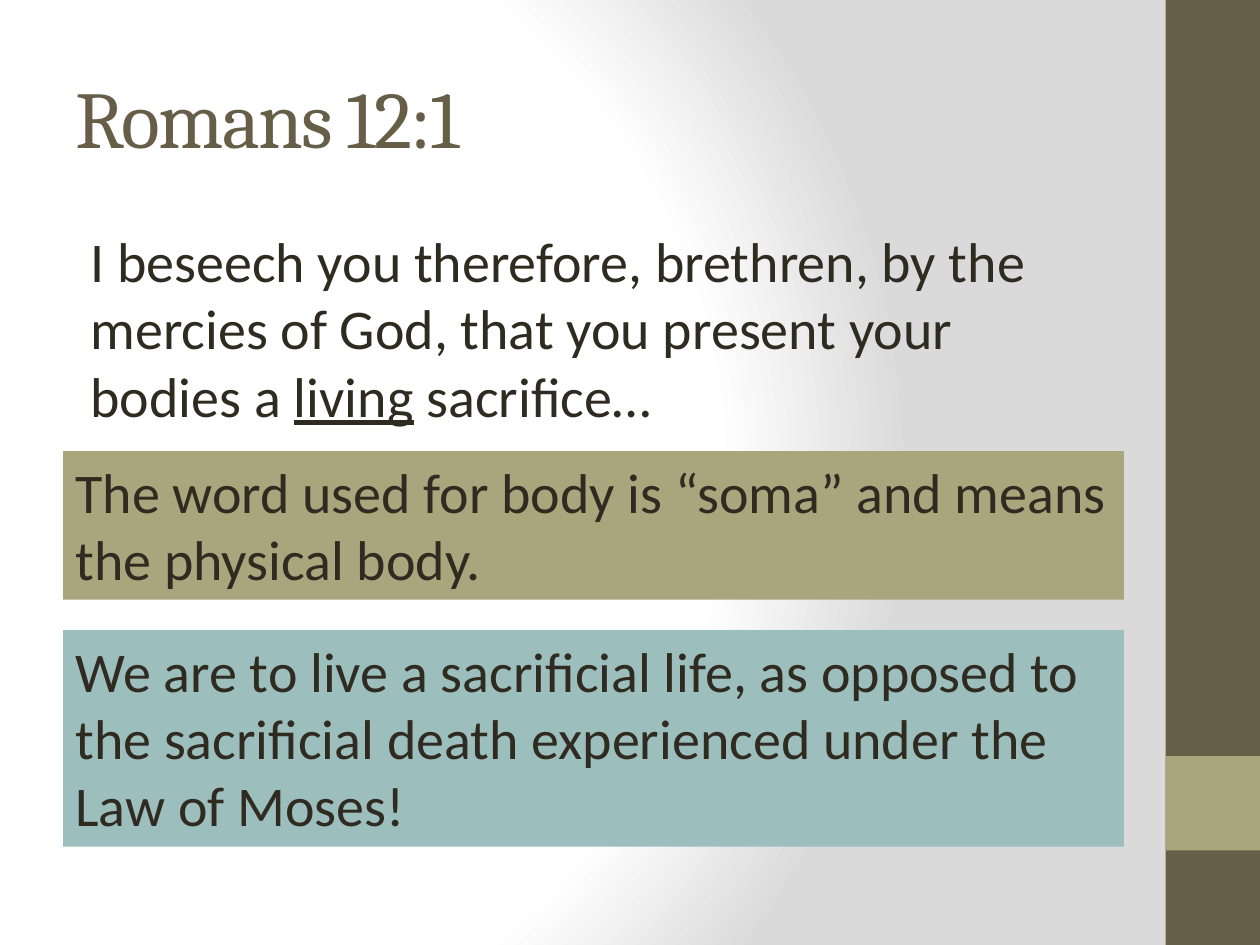
"""Build the Romans 12:1 slide with its verse and two commentary panels."""
from dataclasses import dataclass

from lxml import etree
from pptx import Presentation
from pptx.dml.color import RGBColor
from pptx.enum.shapes import MSO_SHAPE
from pptx.enum.text import MSO_ANCHOR, MSO_AUTO_SIZE, PP_ALIGN
from pptx.oxml.ns import qn
from pptx.slide import Slide
from pptx.util import Pt

RECTANGLE = MSO_SHAPE.RECTANGLE
TOP, MIDDLE = MSO_ANCHOR.TOP, MSO_ANCHOR.MIDDLE
NO_FIT, GROW = MSO_AUTO_SIZE.NONE, MSO_AUTO_SIZE.SHAPE_TO_FIT_TEXT
LEFT = PP_ALIGN.LEFT

COLORS = {
    "white": "FFFFFF",
    "mist": "DADADA",
    "umber": "675E47",
    "olive": "A9A57C",
    "teal": "9CBEBD",
    "ink": "2F2B20",
}
BODY_FONT = {"name": "Calibri", "size": Pt(32)}
TITLE_FONT = {"name": "Cambria", "size": Pt(46)}
MARGIN = 36
PANEL_WIDTH = 606.24


@dataclass(frozen=True)
class Box:
    left: float
    top: float
    width: float
    height: float

    def in_points(self) -> list[Pt]:
        return [Pt(length) for length in (self.left, self.top, self.width, self.height)]


@dataclass(frozen=True)
class Panel:
    box: Box
    color: str
    wording: str = ""


@dataclass(frozen=True)
class Passage:
    box: Box
    pieces: tuple[str, ...]
    font: dict
    color: str
    anchor: MSO_ANCHOR = TOP
    indent: float = 0
    tracking: float = 0
    underlined: str = ""


PANELS = (
    Panel(Box(666, 0, 54, 540), "umber"),
    Panel(Box(666, 432, 54, 54), "olive"),
    Panel(Box(MARGIN, 257.76, PANEL_WIDTH, 84.96), "olive",
          "The word used for body is “soma” and means the physical body."),
    Panel(Box(MARGIN, 360, PANEL_WIDTH, 123.84), "teal",
          "We are to live a sacrificial life, as opposed to the sacrificial "
          "death experienced under the Law of Moses!"),
)
PASSAGES = (
    Passage(Box(MARGIN, 21.6, 600, 90), ("Romans 12:1",), TITLE_FONT, "umber",
            anchor=MIDDLE, tracking=-1),
    Passage(Box(MARGIN, 126, 600, 131.76),
            ("I beseech you therefore, brethren, by the mercies of God, "
             "that you present your bodies a ", "living", " sacrifice…"),
            BODY_FONT, "ink", indent=8.64, underlined="living"),
)


def apply_format(target, values: dict) -> None:
    for attribute, value in values.items():
        setattr(target, attribute, value)


def rgb(color: str) -> RGBColor:
    return RGBColor.from_string(COLORS[color])


def write_run(paragraph, wording: str, font: dict, color: str):
    run = paragraph.add_run()
    run.text = wording
    apply_format(run.font, font)
    run.font.color.rgb = rgb(color)
    return run


def paint_background(slide: Slide) -> None:
    slide.background.fill.gradient()
    gradient = slide.element.find(".//" + qn("a:gradFill"))
    for child in list(gradient):
        gradient.remove(child)
    stops = etree.SubElement(gradient, qn("a:gsLst"))
    for percent, color in ((0, "white"), (75, "white"), (100, "mist")):
        stop = etree.SubElement(stops, qn("a:gs"), pos=str(percent * 1000))
        etree.SubElement(stop, qn("a:srgbClr"), val=COLORS[color])
    circle = etree.SubElement(gradient, qn("a:path"), path="circle")
    etree.SubElement(circle, qn("a:fillToRect"),
                     l="20000", t="50000", r="100000", b="50000")


def draw_panel(slide: Slide, panel: Panel) -> None:
    rectangle = slide.shapes.add_shape(RECTANGLE, *panel.box.in_points())
    rectangle.shadow.inherit = False
    rectangle.fill.solid()
    rectangle.fill.fore_color.rgb = rgb(panel.color)
    rectangle.line.fill.background()
    if panel.wording:
        frame = rectangle.text_frame
        apply_format(frame, {"word_wrap": True, "auto_size": GROW,
                             "vertical_anchor": TOP})
        comment = frame.paragraphs[0]
        comment.alignment = LEFT
        write_run(comment, panel.wording, BODY_FONT, "ink")


def draw_passage(slide: Slide, passage: Passage) -> None:
    frame = slide.shapes.add_textbox(*passage.box.in_points()).text_frame
    apply_format(frame, {"word_wrap": True, "auto_size": NO_FIT,
                         "vertical_anchor": passage.anchor})
    verse = frame.paragraphs[0]
    if passage.indent:
        verse_format = verse._p.get_or_add_pPr()
        apply_format(verse, {"alignment": LEFT})
        verse_format.set("marL", str(Pt(passage.indent)))
    for piece in passage.pieces:
        run = write_run(verse, piece, passage.font, passage.color)
        if piece == passage.underlined:
            run.font.underline = True
        if passage.tracking:
            run._r.get_or_add_rPr().set("spc", str(passage.tracking * 100))


def main() -> None:
    deck = Presentation()
    apply_format(deck, {"slide_width": Pt(720), "slide_height": Pt(540)})
    slide = deck.slides.add_slide(deck.slide_layouts[6])
    paint_background(slide)
    for panel in PANELS:
        draw_panel(slide, panel)
    for passage in PASSAGES:
        draw_passage(slide, passage)
    deck.save("out.pptx")


if __name__ == "__main__":
    main()
